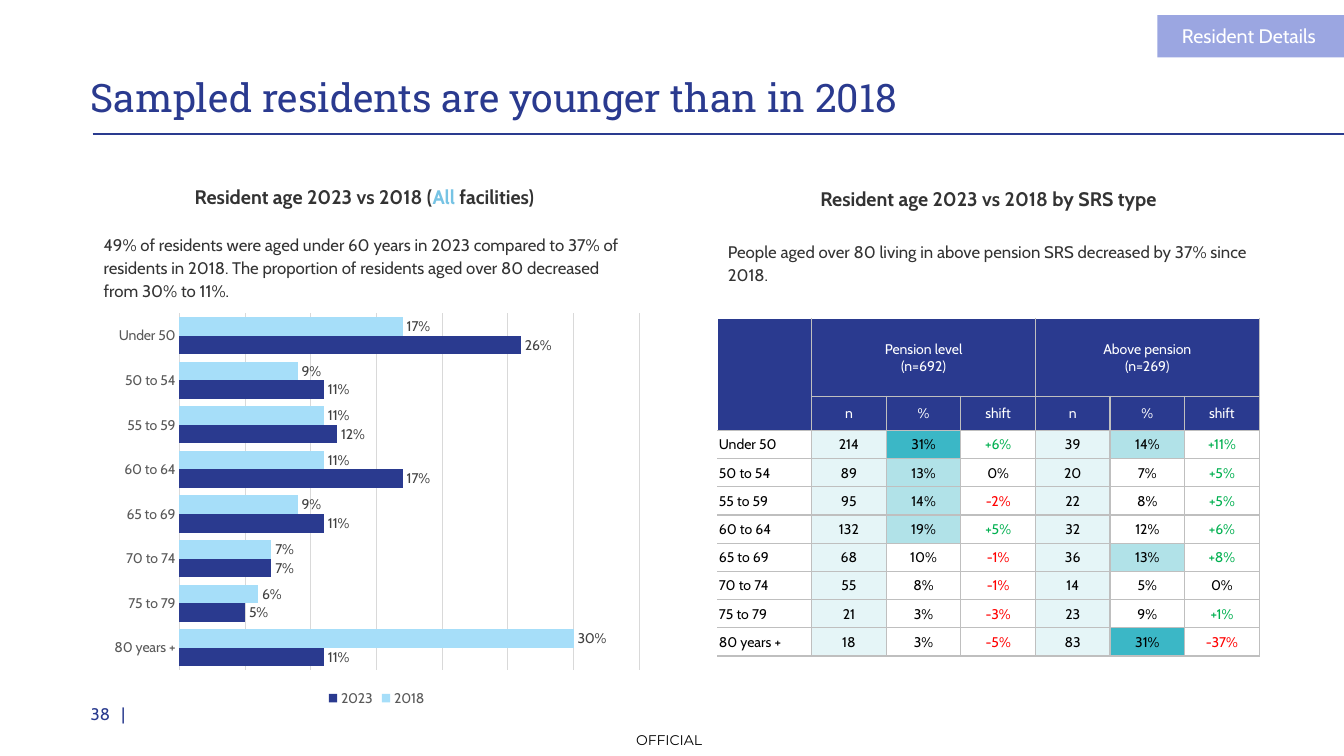
from lxml import etree
from pptx import Presentation
from pptx.chart.data import CategoryChartData
from pptx.dml.color import RGBColor
from pptx.enum.chart import (XL_CHART_TYPE as ChartType, XL_LABEL_POSITION as LabelSpot,
                             XL_LEGEND_POSITION as LegendSpot, XL_TICK_MARK as Tick)
from pptx.enum.shapes import MSO_CONNECTOR as Connector, MSO_SHAPE as Shape
from pptx.enum.text import MSO_ANCHOR as Anchor, PP_ALIGN as Align
from pptx.oxml import parse_xml
from pptx.oxml.ns import nsdecls, qn
from pptx.util import Inches, Pt

COLORS = {
    "navy": "2A3A8F", "rule": "2A3B8F", "white": "FFFFFF", "black": "000000",
    "text": "333333", "accent": "76C3E4", "sky": "A6DEF9", "tag": "9BA6E1",
    "axis": "595959", "label": "404040", "grid": "D9D9D9", "border": "BFBFBF",
    "count": "E5F5F7", "high": "B1E2E8", "top": "3BB7C6", "up": "00B050", "down": "FF0000",
}
AGES = ["Under 50", "50 to 54", "55 to 59", "60 to 64",
        "65 to 69", "70 to 74", "75 to 79", "80 years +"]
SHARES = {
    "2018": ("sky", [0.17, 0.09, 0.11, 0.11, 0.09, 0.07, 0.06, 0.3]),
    "2023": ("navy", [0.26, 0.11, 0.12, 0.17, 0.11, 0.07, 0.05, 0.11]),
}
# count, percent and shift for pension level, then for above pension
SRS_ROWS = [
    (214, 31, 6, 39, 14, 11), (89, 13, 0, 20, 7, 5), (95, 14, -2, 22, 8, 5),
    (132, 19, 5, 32, 12, 6), (68, 10, -1, 36, 13, 8), (55, 8, -1, 14, 5, 0),
    (21, 3, -3, 23, 9, 1), (18, 3, -5, 83, 31, -37),
]
HIGH_SHARE, TOP_SHARE = 13, 31


def rgb(name):
    return RGBColor.from_string(COLORS[name])


def assign(target, values):
    for name, value in values.items():
        setattr(target, name, value)


def style_font(font, size, color, name="Cabin", bold=False):
    assign(font, {"size": Pt(size), "name": name, "bold": bold})
    font.color.rgb = rgb(color)


def style_line(line, color, width):
    line.color.rgb = rgb(color)
    line.width = Pt(width)


def share_style(column, value):
    """Return fill and font colour for one figure of the SRS table."""
    kind = column % 3
    if kind == 0:
        return "count", "black"
    if kind == 1:
        fill = "top" if value >= TOP_SHARE else "high" if value >= HIGH_SHARE else "white"
        # 12% is the largest unmarked share
        return fill, "black"
    return "white", "up" if value > 0 else "down" if value < 0 else "black"


class SlideBuilder:
    def __init__(self, page):
        self.page = page

    def text(self, place, spans, size, align=Align.LEFT, anchor=Anchor.TOP,
             font="Cabin", bold=False, spacing=None, inset=None, wrap=True):
        """Add a one-paragraph text box; spans are (words, colour) pairs."""
        box = self.page.shapes.add_textbox(*map(Inches, place))
        frame = box.text_frame
        assign(frame, {"word_wrap": wrap, "vertical_anchor": anchor})
        if inset is not None:
            sides = ("left", "right", "top", "bottom")
            assign(frame, {f"margin_{side}": Inches(inset) for side in sides})
        para = frame.paragraphs[0]
        assign(para, {"alignment": align, "line_spacing": spacing})
        for words, color in spans:
            span = para.add_run()
            span.text = words
            style_font(span.font, size, color, font, bold)

    def rule(self, start, end, color, width):
        line = self.page.shapes.add_connector(Connector.STRAIGHT, *map(Inches, start + end))
        style_line(line.line, color, width)
        etree.SubElement(line._element.spPr, qn("a:effectLst"))

    def block(self, place, color):
        shape = self.page.shapes.add_shape(Shape.RECTANGLE, *map(Inches, place))
        shape.shadow.inherit = False
        shape.fill.solid()
        shape.fill.fore_color.rgb = rgb(color)
        shape.line.fill.background()

    def bar_chart(self, place, categories, series):
        data = CategoryChartData(number_format="0%")
        data.categories = categories
        for name, (_, values) in series.items():
            data.add_series(name, values)
        chart = self.page.shapes.add_chart(
            ChartType.BAR_CLUSTERED, *map(Inches, place), data).chart
        style_font(chart.font, 10, "black")
        assign(chart, {"has_title": False, "has_legend": True})
        assign(chart.legend, {"position": LegendSpot.BOTTOM, "include_in_layout": False})
        style_font(chart.legend.font, 10, "axis")

        ages, shares = chart.category_axis, chart.value_axis
        assign(ages, {"reverse_order": True, "major_tick_mark": Tick.NONE,
                      "has_major_gridlines": False})
        style_font(ages.tick_labels.font, 10, "axis")
        style_line(ages.format.line, "grid", 0.75)
        assign(shares, {"visible": False, "minimum_scale": 0, "maximum_scale": 0.35,
                        "major_unit": 0.05, "has_major_gridlines": True})
        style_line(shares.major_gridlines.format.line, "grid", 0.75)

        plot = chart.plots[0]
        assign(plot, {"gap_width": 40, "overlap": 0, "vary_by_categories": False})
        for bars, (color, _) in zip(plot.series, series.values()):
            bars.format.fill.solid()
            bars.format.fill.fore_color.rgb = rgb(color)
            labels = bars.data_labels
            assign(labels, {"show_value": True, "position": LabelSpot.OUTSIDE_END,
                            "number_format": "0%", "number_format_is_linked": False})
            style_font(labels.font, 10, "label")
        self.place_plot(chart, {"x": 0.14, "y": 0.02, "w": 0.84, "h": 0.88})

    def place_plot(self, chart, fractions):
        """Fix the inner plot area as fractions of the chart."""
        parts = "".join(f'<c:{key} val="{value}"/>' for key, value in fractions.items())
        area = chart._chartSpace.chart.plotArea
        for old in area.findall(qn("c:layout")):
            area.remove(old)
        area.insert(0, parse_xml(
            f'<c:layout {nsdecls("c")}><c:manualLayout><c:layoutTarget val="inner"/>'
            f'<c:xMode val="edge"/><c:yMode val="edge"/>{parts}</c:manualLayout></c:layout>'))

    def table(self, place, widths, heights):
        table = self.page.shapes.add_table(
            len(heights), len(widths), *map(Inches, place)).table
        assign(table, {"first_row": False, "horz_banding": False})
        for column, width in zip(table.columns, widths):
            column.width = Inches(width)
        for row, height in zip(table.rows, heights):
            row.height = Inches(height)
        for row in range(len(heights)):
            for column in range(len(widths)):
                sides = "L" * (column > 0) + "R" + "T" * (row > 0) + "B"
                self.borders(table.cell(row, column), sides)
        return table

    def borders(self, cell, sides):
        for side in sides:
            cell._tc.get_or_add_tcPr().append(parse_xml(
                f'<a:ln{side} {nsdecls("a")} w="12700"><a:solidFill>'
                f'<a:srgbClr val="{COLORS["border"]}"/></a:solidFill></a:ln{side}>'))

    def cell(self, cell, words, fill, color, align=Align.CENTER):
        cell.fill.solid()
        cell.fill.fore_color.rgb = rgb(fill)
        assign(cell, {"text": words, "vertical_anchor": Anchor.MIDDLE, "margin_bottom": 0})
        assign(cell, {f"margin_{side}": Inches(0.01) for side in ("left", "right", "top")})
        for para in cell.text_frame.paragraphs:
            para.alignment = align
            style_font(para.font, 10, color)
            for span in para.runs:
                style_font(span.font, 10, color)


def add_srs_table(slide):
    table = slide.table((7.12, 3.16, 5.37, 3.32), [0.93] + [0.74] * 6,
                        [0.77, 0.34] + [0.28] * len(AGES))
    table.cell(0, 0).merge(table.cell(1, 0))
    slide.cell(table.cell(0, 0), "", "navy", "white")
    for column, words in ((1, "Pension level\n(n=692)"), (4, "Above pension\n(n=269)")):
        table.cell(0, column).merge(table.cell(0, column + 2))
        slide.cell(table.cell(0, column), words, "navy", "white")
    for column, words in enumerate(["n", "%", "shift"] * 2, 1):
        slide.cell(table.cell(1, column), words, "navy", "white")
    for row, (age, figures) in enumerate(zip(AGES, SRS_ROWS), 2):
        slide.cell(table.cell(row, 0), age, "white", "black", Align.LEFT)
        for column, value in enumerate(figures):
            sign = "+" if column % 3 == 2 and value > 0 else ""
            words = f"{sign}{value}{'%' if column % 3 else ''}"
            slide.cell(table.cell(row, column + 1), words, *share_style(column, value))


def main():
    deck = Presentation()
    assign(deck, {"slide_width": Inches(13.33), "slide_height": Inches(7.5)})
    slide = SlideBuilder(deck.slides.add_slide(deck.slide_layouts[6]))

    slide.text((6.31, 7.26, 0.76, 0.17), [("OFFICIAL", "black")], 10,
               font="Montserrat", inset=0, wrap=False)
    slide.rule((0.92, 1.33), (13.33, 1.33), "rule", 1.5)
    slide.text((0.8, 0.41, 12.13, 0.83), [("Sampled residents are younger than in 2018", "navy")],
               28, anchor=Anchor.BOTTOM, font="Roboto Slab")
    slide.text((0.8, 6.88, 0.59, 0.4), [("38\u00a0\u00a0 |".replace("\u00a0", " "), "rule")], 12,
               anchor=Anchor.MIDDLE, wrap=False)

    heading = {"size": 14, "align": Align.CENTER, "bold": True, "spacing": 1.14}
    slide.text((0.93, 1.75, 5.37, 0.31), [("Resident age 2023 vs 2018 (", "text"),
               ("All", "accent"), (" facilities)", "text")], **heading)
    slide.text((7.12, 1.77, 5.37, 0.31),
               [("Resident age 2023 vs 2018 by SRS type", "text")], **heading)
    slide.bar_chart((1.02, 3.03, 5.43, 4.02), AGES, SHARES)
    slide.text((0.93, 2.25, 5.37, 0.58), [(
        "49% of residents were aged under 60 years in 2023 compared to 37% of residents in 2018. "
        "The proportion of residents aged over 80 decreased from 30% to 11%.", "text")],
        12, spacing=1.14)
    add_srs_table(slide)
    slide.text((7.12, 2.32, 5.37, 0.58), [(
        "People aged over 80 living in above pension SRS decreased by 37% since 2018.", "text")],
        12, spacing=1.14)
    slide.block((11.48, 0.15, 1.85, 0.42), "tag")
    slide.text((10.51, 0.19, 2.64, 0.34), [("Resident Details", "white")], 14, align=Align.RIGHT)
    deck.save("out.pptx")


if __name__ == "__main__":
    main()
